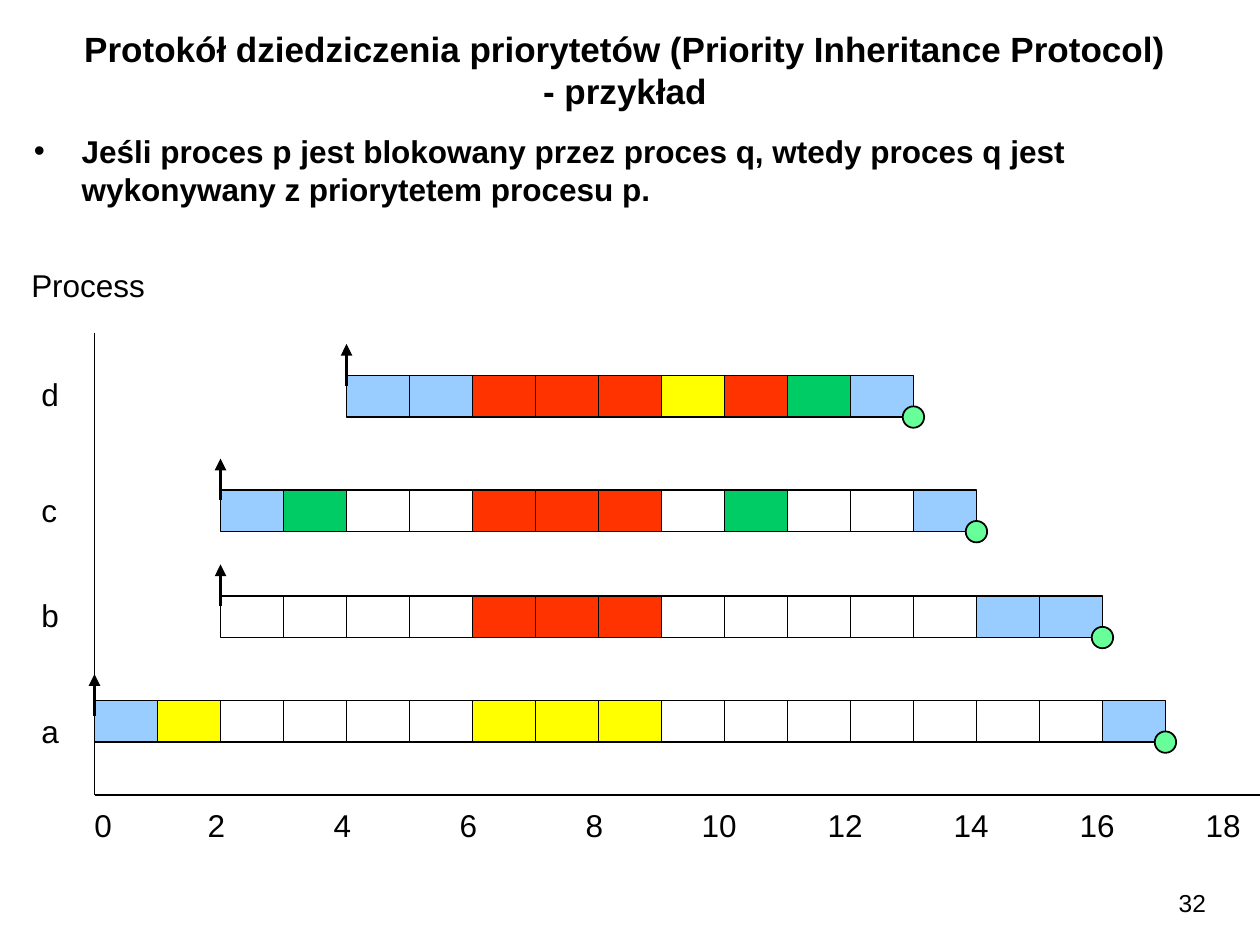
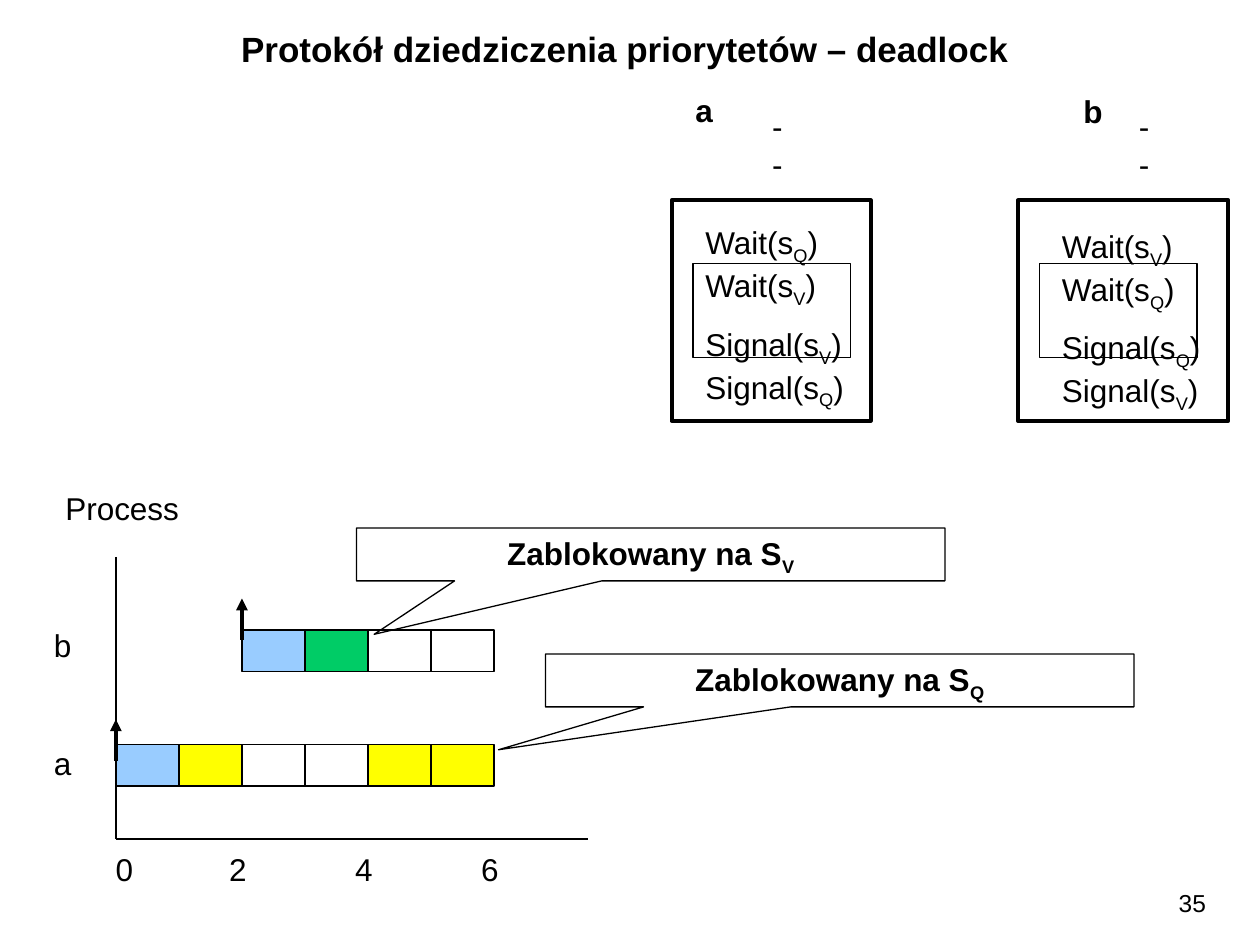
from lxml import etree
from pptx import Presentation
from pptx.dml.color import RGBColor
from pptx.enum.shapes import MSO_CONNECTOR, MSO_SHAPE
from pptx.enum.text import MSO_ANCHOR, MSO_AUTO_SIZE, PP_ALIGN
from pptx.oxml.ns import qn
from pptx.util import Inches, Pt

BLACK = "000000"
DONE = "66FF99"
FILLS = {"B": "99CCFF", "Y": "FFFF00", "R": "FF3300", "G": "00CC66", "-": None}
CELL_W, CELL_H, DOT = 0.5, 0.33, 0.17


def write(shape, text, size=18, bold=False, align=PP_ALIGN.LEFT, wrap=True):
    """Fill a shape with text: blank line = paragraph, newline = break, _x_ = subscript."""
    tf = shape.text_frame
    tf.word_wrap = wrap
    tf.auto_size = MSO_AUTO_SIZE.NONE
    tf.vertical_anchor = MSO_ANCHOR.TOP
    for i, block in enumerate(text.split("\n\n")):
        p = tf.add_paragraph() if i else tf.paragraphs[0]
        p.alignment = align
        p.space_before = Pt(size / 2 if i else 0)
        for j, line in enumerate(block.split("\n")):
            if j:
                p.add_line_break()
            for k, piece in enumerate(line.split("_")):
                r = p.add_run()
                r.text = piece
                r.font.name, r.font.size, r.font.bold = "Arial", Pt(size), bold
                r.font.color.rgb = RGBColor.from_string(BLACK)
                if k % 2:
                    r.font._element.set("baseline", "-25000")
    return tf


def draw(s, kind, x, y, w, h, fill=None, weight=1):
    sp = s.shapes.add_shape(kind, Inches(x), Inches(y), Inches(w), Inches(h))
    sp.shadow.inherit = False
    if fill:
        sp.fill.solid()
        sp.fill.fore_color.rgb = RGBColor.from_string(fill)
    else:
        sp.fill.background()
    sp.line.color.rgb = RGBColor.from_string(BLACK)
    sp.line.width = Pt(weight)
    return sp


# Rows: process, cells, first time slot, row top, arrow top, label top
schedules = [
    dict(title="Protokół dziedziczenia priorytetów (Priority Inheritance Protocol)\n- przykład",
         title_h=0.77, number="32", origin=0.75, top=2.64, base=6.31, right=10,
         caption=(0.15, 2.06), label_x=0.23, last_tick=18, dots=True,
         rows=[("a", "BY----YYY-------B", 0, 5.56, 5.35, 5.6),
               ("b", "----RRR-----BB", 2, 4.73, 4.48, 4.68),
               ("c", "BG--RRR-G--B", 2, 3.89, 3.64, 3.85),
               ("d", "BBRRRYRGB", 4, 2.98, 2.73, 2.93)]),
    dict(title="Protokół dziedziczenia priorytetów – deadlock",
         title_h=0.43, number="35", origin=0.92, top=4.42, base=6.66, right=4.67,
         caption=(0.42, 3.83), label_x=0.33, last_tick=6, dots=False,
         rows=[("a", "BY--YY", 0, 5.91, 5.71, 5.86),
               ("b", "BG--", 2, 5, 4.75, 4.92)]),
]

prs = Presentation()
prs.slide_width, prs.slide_height = Inches(10), Inches(7.5)

for d in schedules:
    s = prs.slides.add_slide(prs.slide_layouts[5])
    title = s.shapes.title
    title.left, title.top = Inches(0.25), Inches(0.17)
    title.width, title.height = Inches(9.42), Inches(d["title_h"])
    write(title, d["title"], 20, True, PP_ALIGN.CENTER)
    number = s.shapes.add_textbox(Inches(8.75), Inches(7), Inches(0.92), Inches(0.33))
    write(number, d["number"], 14, align=PP_ALIGN.RIGHT)

    # Cells and completion dots; axes and arrival arrows are drawn together below
    x0, base = d["origin"], d["base"]
    lines = [(x0, d["top"], x0, base, 1), (x0, base, d["right"], base, 1)]
    labels = [("Process", *d["caption"], 1.1)]
    for name, cells, slot, y, arrow_y, label_y in d["rows"]:
        start = x0 + slot * CELL_W
        end = start + len(cells) * CELL_W
        for i, code in enumerate(cells):
            draw(s, MSO_SHAPE.RECTANGLE, start + i * CELL_W, y, CELL_W, CELL_H, FILLS[code])
        if d["dots"]:
            draw(s, MSO_SHAPE.OVAL, end - DOT / 2, y + CELL_H - DOT / 2, DOT, DOT, DONE)
        lines.append((start, arrow_y, start, arrow_y + 0.33, 2.25))
        labels.append((name, d["label_x"], label_y, 0.34))

    for x1, y1, x2, y2, weight in lines:
        c = s.shapes.add_connector(MSO_CONNECTOR.STRAIGHT, Inches(x1), Inches(y1),
                                   Inches(x2), Inches(y2))
        c.line.color.rgb = RGBColor.from_string(BLACK)
        c.line.width = Pt(weight)
        if weight > 1:
            etree.SubElement(c.line._get_or_add_ln(), qn("a:headEnd"), type="triangle")
        etree.SubElement(c._element.spPr, qn("a:effectLst"))

    for tick in range(0, d["last_tick"] + 1, 2):
        shift = 0.1 if tick == 0 else 0.2 if tick < 10 else 0.28
        width = 0.34 if tick < 10 else 0.48
        labels.append((str(tick), x0 + tick * CELL_W - shift, base + 0.04, width))
    for text, x, y, w in labels:
        label = s.shapes.add_textbox(Inches(x), Inches(y), Inches(w), Inches(0.4))
        write(label, text, wrap=False)

# Priority inheritance rule
rule = prs.slides[0].shapes.add_textbox(Inches(0.17), Inches(1), Inches(9.83), Inches(0.83))
tf = write(rule, "Jeśli proces p jest blokowany przez proces q, wtedy proces q jest "
                 "wykonywany z priorytetem procesu p.", bold=True)
pPr = tf.paragraphs[0]._p.get_or_add_pPr()
pPr.set("marL", str(Inches(0.38)))
pPr.set("indent", str(-Inches(0.38)))
etree.SubElement(pPr, qn("a:buFont"), typeface="Arial")
etree.SubElement(pPr, qn("a:buChar"), char="•")

# Deadlock: nested critical sections of both processes
s = prs.slides[1]
sections = [
    # name, outer semaphore, inner semaphore, outer x and width, inner x, code, dashes, name
    ("a", "Q", "V", 5.33, 1.58, 5.5, (5.5, 1.72, 1.33), 5.42, (5.42, 0.67)),
    ("b", "V", "Q", 8.08, 1.67, 8.25, (8.33, 1.75, 1.42), 8.33, (8.5, 0.68)),
]
for name, outer, inner, outer_x, outer_w, inner_x, code, dash_x, name_at in sections:
    draw(s, MSO_SHAPE.RECTANGLE, outer_x, 1.59, outer_w, 1.75, weight=2.25)
    draw(s, MSO_SHAPE.RECTANGLE, inner_x, 2.09, 1.25, 0.75, weight=0.75)
    calls = (f"Wait(s_{outer}_)\nWait(s_{inner}_)\n\n"
             f"Signal(s_{inner}_)\nSignal(s_{outer}_)")
    for text, box, bold, align in [
            (calls, (*code, 1.45), False, PP_ALIGN.LEFT),
            ("-\n-", (dash_x, 0.8, 1.5, 0.7), False, PP_ALIGN.CENTER),
            (name, (*name_at, 0.5, 0.4), True, PP_ALIGN.LEFT)]:
        write(s.shapes.add_textbox(*map(Inches, box)), text, bold=bold, align=align)

for semaphore, x, y, tip in [("V", 2.83, 4.19, (-0.47, 1.51)), ("Q", 4.33, 5.19, (-0.58, 1.31))]:
    callout = draw(s, MSO_SHAPE.RECTANGULAR_CALLOUT, x, y, 4.67, 0.42, weight=0.75)
    callout.adjustments[0], callout.adjustments[1] = tip
    write(callout, f"Zablokowany na S_{semaphore}_", bold=True, align=PP_ALIGN.CENTER)

prs.save("out.pptx")
